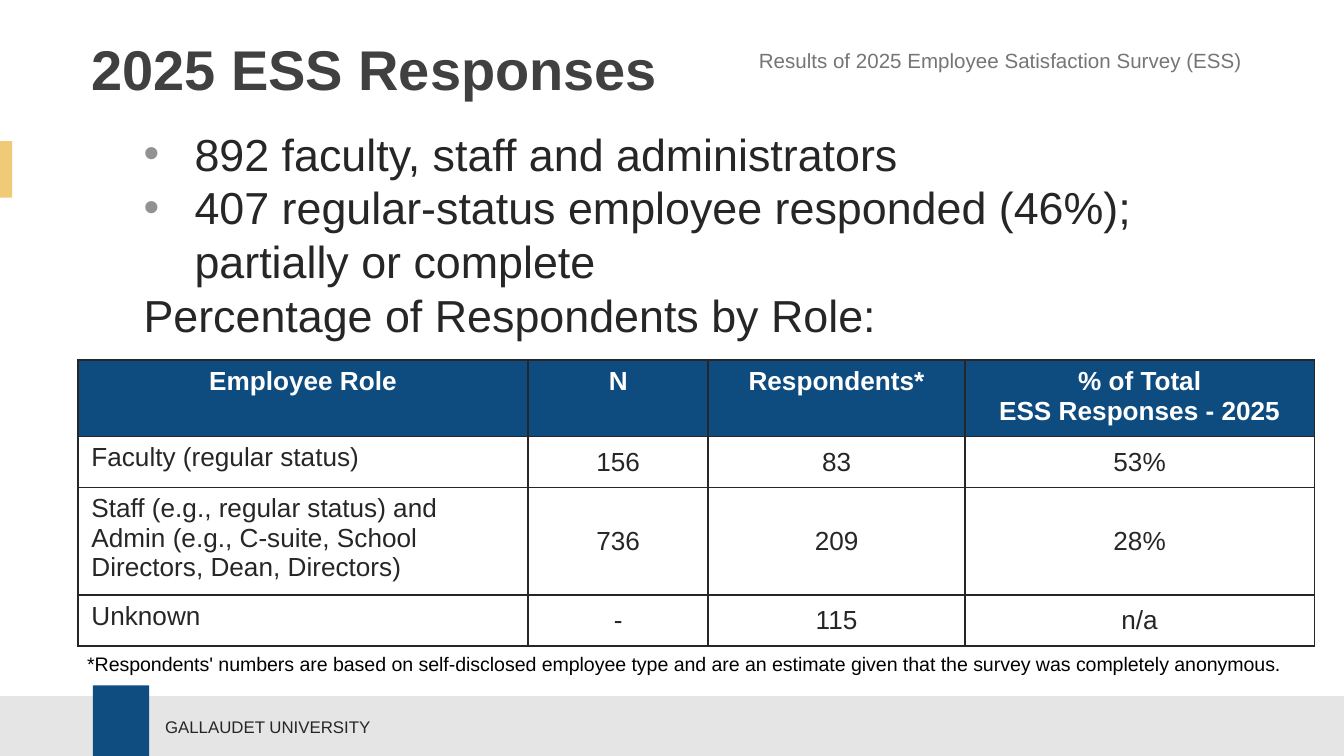
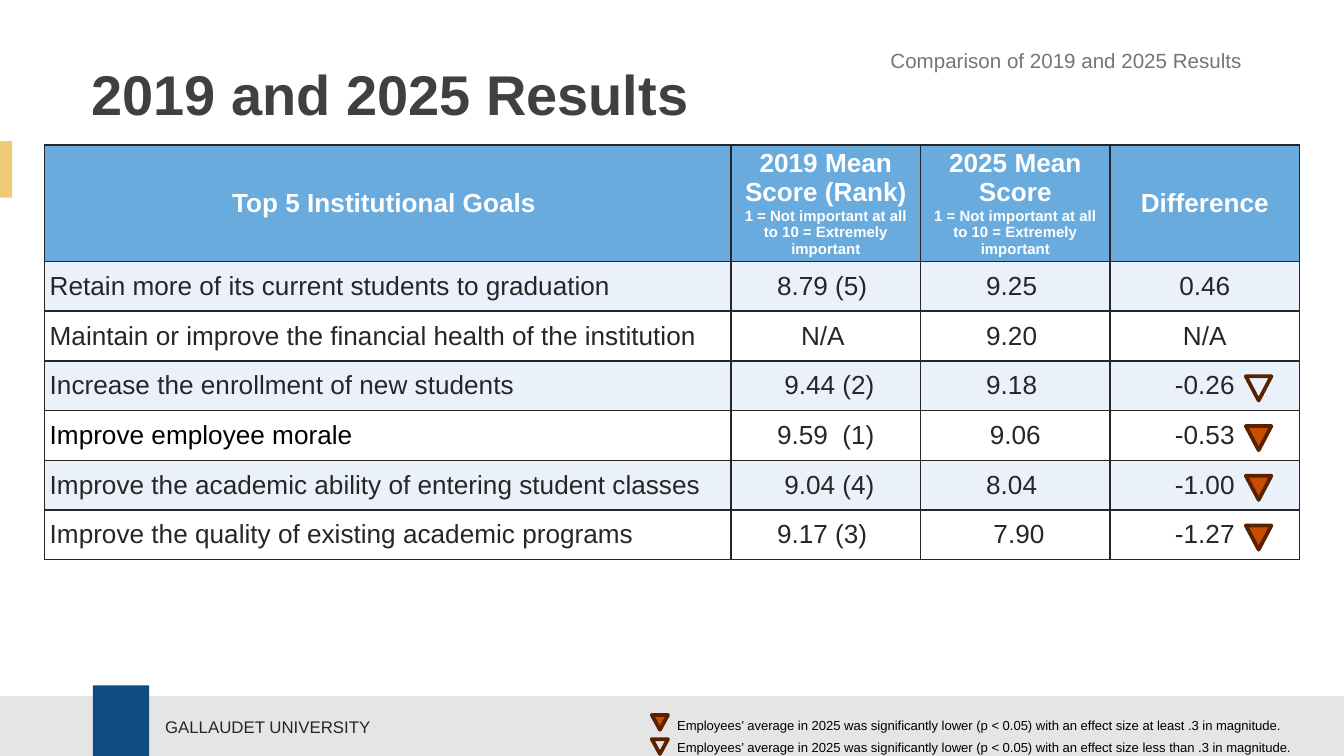
from lxml.etree import SubElement
from pptx import Presentation
from pptx.dml.color import RGBColor
from pptx.enum.shapes import MSO_SHAPE as Shape
from pptx.enum.text import MSO_ANCHOR as Anchor, PP_ALIGN as Align
from pptx.oxml.ns import qn
from pptx.util import Inches, Pt

FONT = "Arial"
INK, BLACK, WHITE = "262626", "000000", "FFFFFF"
GOLD, BAND_GREY, NAVY = "EFCA77", "E5E5E5", "0F4D81"
TITLE_GREY, CAPTION_GREY, BULLET_GREY, FOOTER_INK = "404041", "757575", "929292", "252626"
HEADER_NAVY, HEADER_BLUE, STRIPE_BLUE = "0E4C80", "69ABDD", "EBF1FA"
ARROW_FILL, ARROW_LINE = "C84D00", "582200"

FOOTER = "GALLAUDET UNIVERSITY"

RESPONSE_BULLETS = [
    "892 faculty, staff and administrators",
    "407 regular-status employee responded (46%); partially or complete",
]
TABLE_INTRO = "Percentage of Respondents by Role:"
ROLE_ROWS = [
    ["Employee Role", "N", "Respondents*", "% of Total\nESS Responses - 2025"],
    ["Faculty (regular status)", "156", "83", "53%"],
    ["Staff (e.g., regular status) and Admin (e.g., C-suite, School Directors, Dean, Directors)",
     "736", "209", "28%"],
    ["Unknown", "-", "115", "n/a"],
]
ROLE_COLUMNS = [3.35, 1.34, 1.91, 2.6]
ROLE_HEIGHTS = [0.52, 0.38, 0.38, 0.38]
FOOTNOTE = ("*Respondents' numbers are based on self-disclosed employee type and are an "
            "estimate given that the survey was completely anonymous.")

SCALE = "1 = Not important at all to 10 = Extremely important"
GOAL_HEADER = ["Top 5 Institutional Goals ", "2019 Mean Score (Rank)", "2025 Mean Score", "Difference"]
GOAL_ROWS = [
    ["Retain more of its current students to graduation", "8.79 (5) ", "9.25 ", "0.46"],
    ["Maintain or improve the financial health of the institution", "N/A ", "9.20 ", "N/A"],
    ["Increase the enrollment of new students", " 9.44 (2)", "9.18 ", "-0.26"],
    ["Improve employee morale", "9.59  (1)", "9.06", "-0.53"],
    ["Improve the academic ability of entering student classes", " 9.04 (4)", "8.04 ", "-1.00"],
    ["Improve the quality of existing academic programs", "9.17 (3) ", " 7.90", "-1.27"],
]
BLACK_GOAL = "Improve employee morale"
GOAL_COLUMNS = [5.11, 1.41, 1.41, 1.41]
GOAL_LEFT, GOAL_TOP, GOAL_HEADER_HEIGHT, GOAL_ROW_HEIGHT = 0.33, 1.08, 0.4, 0.37
FIRST_ARROW_TOP = 2.8
# Goal row index: whether the drop has a large effect size
DROPS = {2: False, 3: True, 4: True, 5: True}
LEGEND = [
    ("Employees’ average in 2025 was significantly lower (p < 0.05) "
     "with an effect size at least .3 in magnitude.", True),
    ("Employees’ average in 2025 was significantly lower (p < 0.05) "
     "with an effect size less than .3 in magnitude.", False),
]


def rgb(color):
    return RGBColor.from_string(color)


def add_block(slide, kind, box, fill=None, line=None):
    shape = slide.shapes.add_shape(kind, *map(Inches, box))
    shape.shadow.inherit = False
    if fill:
        shape.fill.solid()
        shape.fill.fore_color.rgb = rgb(fill)
    else:
        shape.fill.background()
    if line:
        shape.line.color.rgb = rgb(line)
        shape.line.width = Pt(2)
    else:
        shape.line.fill.background()
    return shape


def add_paragraph(frame, text, size, color, bold=False, align=Align.LEFT):
    """Fill the empty first paragraph, or append one; newlines become line breaks."""
    first = frame.paragraphs[0]
    paragraph = frame.add_paragraph() if first.runs else first
    paragraph.alignment = align
    for index, part in enumerate(text.split("\n")):
        if index:
            paragraph.add_line_break()
        run = paragraph.add_run()
        run.text = part
        run.font.name = FONT
        run.font.size = Pt(size)
        run.font.bold = bold
        run.font.color.rgb = rgb(color)
    return paragraph


def add_frame(slide, box, anchor=Anchor.TOP):
    frame = slide.shapes.add_textbox(*map(Inches, box)).text_frame
    frame.word_wrap = True
    frame.vertical_anchor = anchor
    return frame


def set_indent(paragraph, left, first=0.0):
    properties = paragraph._p.get_or_add_pPr()
    properties.set("marL", str(Inches(left)))
    properties.set("indent", str(Inches(first)))
    return properties


def add_bullet(paragraph):
    properties = set_indent(paragraph, 0.38, -0.38)
    color = SubElement(properties, qn("a:buClr"))
    SubElement(color, qn("a:srgbClr"), val=BULLET_GREY)
    SubElement(properties, qn("a:buFont"), typeface=FONT)
    SubElement(properties, qn("a:buChar"), char="•")


def add_grid(slide, box, columns, heights):
    """Add a table whose rows may grow with their text up to the box height."""
    frame = slide.shapes.add_table(len(heights), len(columns), *map(Inches, box))
    table = frame.table
    table.horz_banding = False
    for column, width in zip(table.columns, columns):
        column.width = Inches(width)
    for row, height in zip(table.rows, heights):
        row.height = Inches(height)
    frame.height = Inches(box[3])
    return table


def style_cell(cell, fill, anchor):
    cell.vertical_anchor = anchor
    properties = cell._tc.get_or_add_tcPr()
    for side in ("lnL", "lnR", "lnT", "lnB"):
        border = SubElement(properties, qn(f"a:{side}"), w=str(Pt(1)))
        solid = SubElement(border, qn("a:solidFill"))
        SubElement(solid, qn("a:srgbClr"), val=INK)
    if fill:
        cell.fill.solid()
        cell.fill.fore_color.rgb = rgb(fill)
    else:
        cell.fill.background()


def add_drop_arrow(slide, box, large):
    arrow = add_block(slide, Shape.ISOSCELES_TRIANGLE, box,
                      ARROW_FILL if large else None, ARROW_LINE)
    arrow.rotation = 180


def start_slide(presentation, title, title_top, caption):
    """Add a slide with the shared bands, footer, caption and title."""
    slide = presentation.slides.add_slide(presentation.slide_layouts[6])
    add_block(slide, Shape.RECTANGLE, (0, 1.05, 0.09, 0.42), GOLD)
    add_block(slide, Shape.RECTANGLE, (-0.03, 5.18, 10.09, 0.5), BAND_GREY)
    add_block(slide, Shape.RECTANGLE, (0.69, 5.1, 0.42, 0.58), NAVY)
    footer = add_frame(slide, (1.13, 5.28, 3.95, 0.25), Anchor.MIDDLE)
    add_paragraph(footer, FOOTER, 9, FOOTER_INK)
    caption_frame = add_frame(slide, (5.29, 0.31, 4.05, 0.28))
    add_paragraph(caption_frame, caption, 11, CAPTION_GREY, align=Align.RIGHT)
    title_frame = add_frame(slide, (0.58, title_top, 8.75, 0.76), Anchor.MIDDLE)
    add_paragraph(title_frame, title, 30, TITLE_GREY, bold=True)
    return slide


def build_responses(presentation):
    slide = start_slide(presentation, "2025 ESS Responses", 0.13,
                        "Results of 2025 Employee Satisfaction Survey (ESS)")
    body = add_frame(slide, (0.97, 0.89, 8.37, 3.69))
    for text in RESPONSE_BULLETS:
        add_bullet(add_paragraph(body, text, 24, INK))
    add_paragraph(body, TABLE_INTRO, 24, INK)

    table = add_grid(slide, (0.58, 2.68, 9.2, 2.12), ROLE_COLUMNS, ROLE_HEIGHTS)
    for row, texts in enumerate(ROLE_ROWS):
        header = row == 0
        for column, text in enumerate(texts):
            label = column == 0
            cell = table.cell(row, column)
            style_cell(cell, HEADER_NAVY if header else None,
                       Anchor.TOP if header or label else Anchor.MIDDLE)
            add_paragraph(cell.text_frame, text, 14, WHITE if header else INK, header,
                          Align.LEFT if label and not header else Align.CENTER)

    footnote = add_frame(slide, (0.55, 4.8, 9.38, 0.28))
    add_paragraph(footnote, FOOTNOTE, 10.5, BLACK)


def build_comparison(presentation):
    slide = start_slide(presentation, "2019 and 2025 Results", 0.31,
                        "Comparison of 2019 and 2025 Results")
    heights = [GOAL_HEADER_HEIGHT] + [GOAL_ROW_HEIGHT] * len(GOAL_ROWS)
    table = add_grid(slide, (GOAL_LEFT, GOAL_TOP, 9.33, 3.1), GOAL_COLUMNS, heights)
    for row, texts in enumerate([GOAL_HEADER] + GOAL_ROWS):
        header = row == 0
        fill = HEADER_BLUE if header else STRIPE_BLUE if row % 2 else WHITE
        for column, text in enumerate(texts):
            cell = table.cell(row, column)
            style_cell(cell, fill, Anchor.MIDDLE)
            cell.margin_left = cell.margin_right = Inches(0.04)
            cell.margin_top = cell.margin_bottom = 0
            color = WHITE if header else BLACK if text == BLACK_GOAL else INK
            align = Align.CENTER if header or column else Align.LEFT
            add_paragraph(cell.text_frame, text, 14, color, header, align)
            if header and "Mean" in text:
                add_paragraph(cell.text_frame, SCALE, 8, WHITE, True, Align.CENTER)

    first_drop = min(DROPS)
    for row, large in DROPS.items():
        top = FIRST_ARROW_TOP + (row - first_drop) * GOAL_ROW_HEIGHT
        add_drop_arrow(slide, (9.27, top, 0.19, 0.18), large)

    legend = add_frame(slide, (3.94, 5.29, 5.87, 0.4))
    for index, (text, large) in enumerate(LEGEND):
        paragraph = add_paragraph(legend, text, 7, BLACK)
        set_indent(paragraph, 1)
        if index:
            paragraph.space_before = Pt(3.5)
        add_drop_arrow(slide, (4.85, 5.32 + index * 0.18, 0.12, 0.11), large)


def main():
    presentation = Presentation()
    presentation.slide_width = Inches(10)
    presentation.slide_height = Inches(10) * 9 // 16
    build_responses(presentation)
    build_comparison(presentation)
    presentation.save("out.pptx")


if __name__ == "__main__":
    main()
